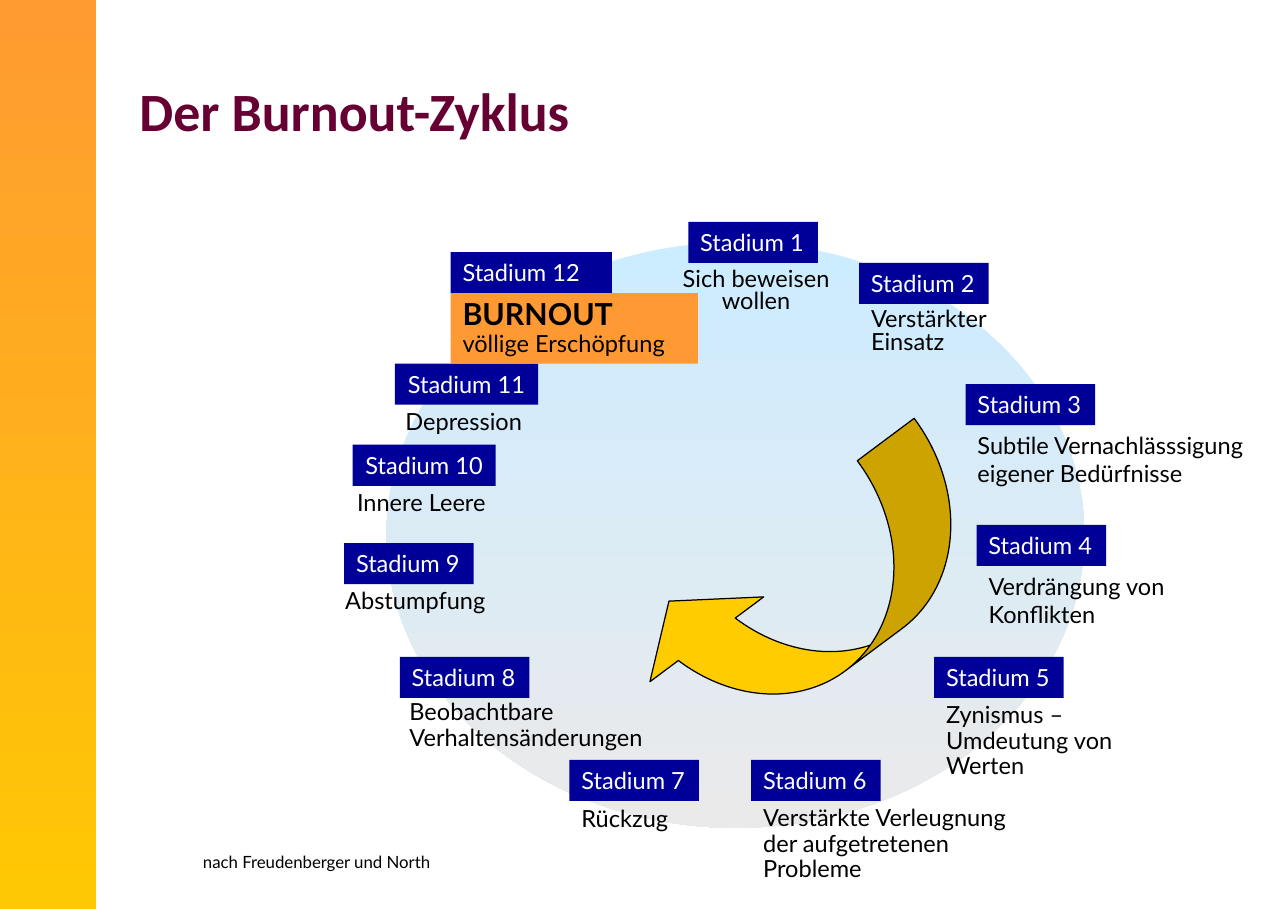
from lxml.etree import SubElement
from pptx import Presentation
from pptx.dml.color import RGBColor
from pptx.enum.shapes import MSO_SHAPE
from pptx.enum.text import MSO_ANCHOR, PP_ALIGN
from pptx.oxml.ns import qn
from pptx.util import Pt


class Theme:
    plum, black, white = "660033", "000000", "FFFFFF"
    navy, orange, gold = "000099", "FF9933", "FFCC00"
    bar = ("FF9B31", "FFC804")
    sky = ("CCECFF", "EAEAEA")
    head, text = "Calibri", "Lato"
    title, big, body, small = 32, 18, 14, 10


def draw(kind, at, *tones):
    """Add a shape without outline; two tones make a vertical gradient."""
    shape = slide.shapes.add_shape(kind, *map(Pt, at))
    shape.shadow.inherit = False
    shape.line.fill.background()
    if len(tones) == 2:
        shape.fill.gradient()
        shape.fill.gradient_angle = 270
        for stop, tone in zip(shape.fill.gradient_stops, tones):
            stop.color.rgb = RGBColor.from_string(tone)
    else:
        shape.fill.solid()
        shape.fill.fore_color.rgb = RGBColor.from_string(tones[0])
    return shape


def write(shape, text, tone, size=Theme.body, face=Theme.text, bold=False,
          align=PP_ALIGN.LEFT, space=1.0, anchor=MSO_ANCHOR.TOP, wrap=True):
    frame = shape.text_frame
    frame.word_wrap = wrap
    frame.vertical_anchor = anchor
    para = frame.paragraphs[0]
    para.text = text
    para.alignment = align
    para.line_spacing = space
    for run in para.runs:
        run.font.name = face
        run.font.size = Pt(size)
        run.font.bold = bold
        run.font.color.rgb = RGBColor.from_string(tone)
    # A line break needs its own size to keep the line height
    for gap in para._p.findall(qn("a:br")):
        SubElement(gap, qn("a:rPr"), sz=str(size * 100))
    return para


deck = Presentation()
deck.slide_width, deck.slide_height = Pt(765.36), Pt(540)
slide = deck.slides.add_slide(deck.slide_layouts[5])

title = slide.shapes.title
title.left, title.top, title.width, title.height = map(Pt, (75.6, 31.7, 671.8, 67.7))
write(title, "Der Burnout-Zyklus", Theme.plum, Theme.title, Theme.head, True,
      anchor=MSO_ANCHOR.MIDDLE)

draw(MSO_SHAPE.RECTANGLE, (0, 0, 57, 540), *Theme.bar)
draw(MSO_SHAPE.OVAL, (229.7, 144, 414.7, 347.8), *Theme.sky)

# Tag left, top, width; note shift right and down, width, height; spacing, align, text
left, mid = PP_ALIGN.LEFT, PP_ALIGN.CENTER
stages = [
    (409, 131.8, 77, -20.2, 24.4, 121, 34.6, 0.8, mid, "Sich beweisen wollen"),
    (510.5, 156.2, 77, 0, 24, 121, 34.6, 0.8, left, "Verstärkter\nEinsatz"),
    (573.8, 228.2, 77, 0, 24, 191.5, 41, 1.0, left,
     "Subtile Vernachlässsigung eigener Bedürfnisse"),
    (580.3, 311.8, 77, 0, 24.4, 159, 41, 1.0, left, "Verdrängung von Konflikten"),
    (555.1, 390.2, 77, 0, 24, 121, 52.6, 0.9, left,
     "Zynismus –\nUmdeutung von\nWerten"),
    (446.4, 451.4, 77, 0, 24, 178.6, 52.6, 0.9, left,
     "Verstärkte Verleugnung der aufgetretenen Probleme"),
    (338.4, 451.4, 77, 0, 24.4, 82.8, 22.3, 0.9, left, "Rückzug"),
    (237.6, 390.2, 77, -1.4, 22.4, 172, 37.4, 0.9, left,
     "Beobachtbare\nVerhaltensänderungen"),
    (204.5, 322.6, 77, -6.5, 24, 198, 22.3, 0.9, left, "Abstumpfung"),
    (209.5, 264.2, 85, -19.6, 24, 121, 22.3, 0.9, mid, "Innere Leere"),
    (234.7, 216, 85, -19.6, 24, 121, 22.3, 0.9, mid, "Depression"),
    (267.8, 149.8, 95.8, 0, 24.4, 146.9, 41.8, 0.9, left,
     "BURNOUT\nvöllige Erschöpfung"),
]
for num, (x, y, wide, right, down, span, high, space, align, text) in enumerate(stages, 1):
    last = num == len(stages)
    tag = draw(MSO_SHAPE.RECTANGLE, (x, y, wide, 24.4), Theme.navy)
    write(tag, f"Stadium {num}", Theme.white, wrap=last,
          align=mid if num in (10, 11) else left)
    place = (x + right, y + down, span, high)
    if last:
        note = draw(MSO_SHAPE.RECTANGLE, place, Theme.orange)
    else:
        note = slide.shapes.add_textbox(*map(Pt, place))
    para = write(note, text, Theme.black, align=align, space=space)
    if last:
        para.runs[0].font.size = Pt(Theme.big)
        para.runs[0].font.bold = True

arrow = draw(MSO_SHAPE.CURVED_LEFT_ARROW, (434.2, 241.9, 95.8, 223.9), Theme.gold)
arrow.rotation = 53.3
for spot, value in enumerate((0.44, 0.88, 0.33)):
    arrow.adjustments[spot] = value
arrow.line.color.rgb = RGBColor.from_string(Theme.black)
arrow.line.width = Pt(0.75)

credit = slide.shapes.add_textbox(*map(Pt, (113.5, 502.6, 203, 19.4)))
write(credit, "nach Freudenberger und North", Theme.black, Theme.small)

deck.save("out.pptx")
